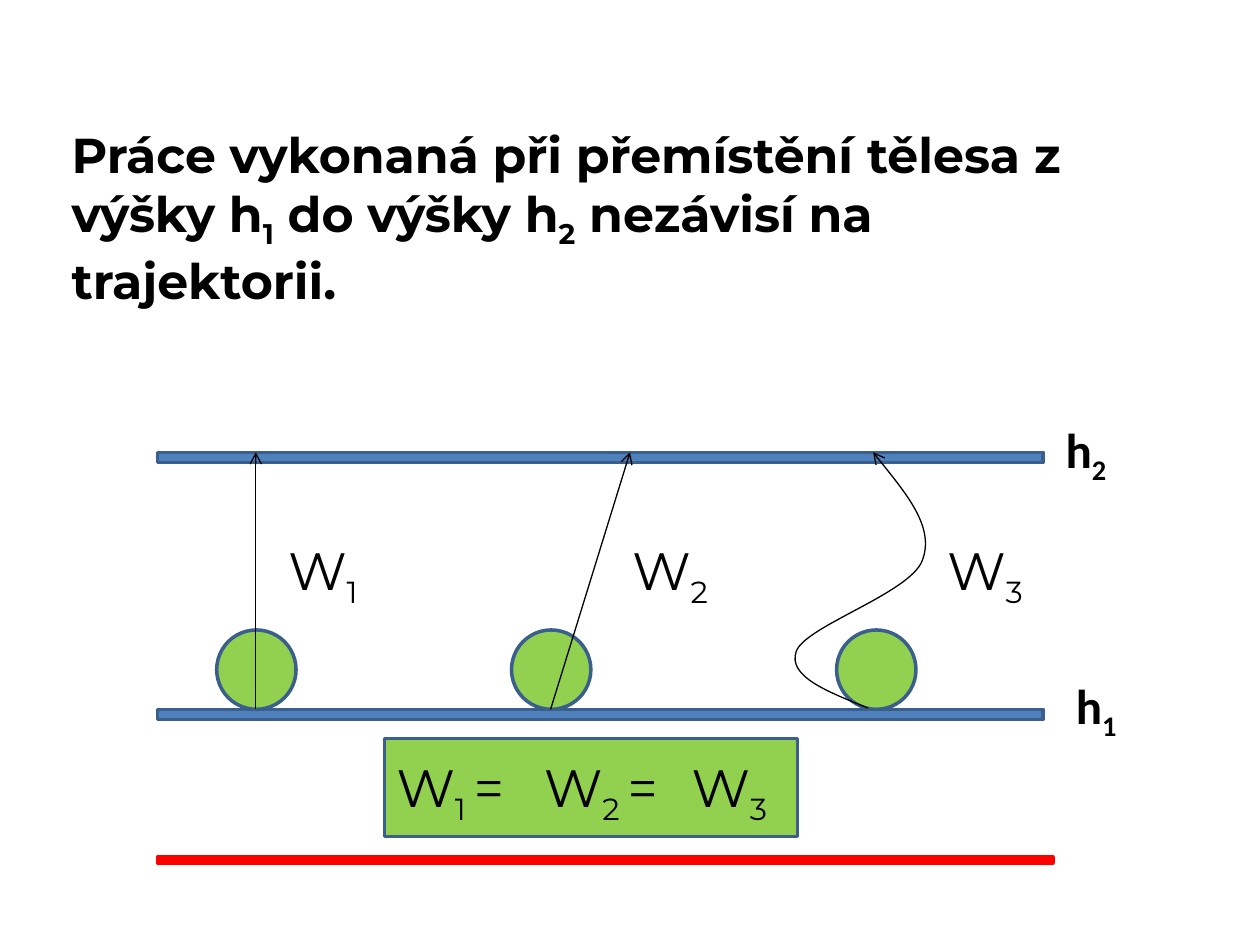
from dataclasses import dataclass

from lxml import etree
from pptx import Presentation
from pptx.dml.color import RGBColor
from pptx.enum.shapes import MSO_CONNECTOR, MSO_SHAPE
from pptx.oxml.ns import qn
from pptx.util import Inches, Pt

RECT = MSO_SHAPE.RECTANGLE
OVAL = MSO_SHAPE.OVAL
LINE = MSO_CONNECTOR.STRAIGHT


@dataclass
class Theme:
    black = RGBColor.from_string("000000")
    green = RGBColor.from_string("92D050")
    blue = RGBColor.from_string("4F81BD")
    edge = RGBColor.from_string("3A5F8C")
    red = RGBColor.from_string("FF0000")
    head = Pt(28)
    work = Pt(30)
    thick = Pt(2)
    thin = Pt(0.75)
    sans = "Montserrat"
    label = "Calibri"


theme = Theme()
deck = Presentation()
deck.slide_width = Inches(10)
deck.slide_height = Inches(7.5)
slide = deck.slides.add_slide(deck.slide_layouts[6])
shapes = slide.shapes


def add_solid(kind, box, fill, edge):
    shape = shapes.add_shape(kind, *map(Inches, box))
    shape.shadow.inherit = False
    shape.fill.solid()
    shape.fill.fore_color.rgb = fill
    shape.line.color.rgb = edge
    shape.line.width = theme.thick


def add_text(box, parts, font, size, bold):
    frame = shapes.add_textbox(*map(Inches, box)).text_frame
    frame.word_wrap = True
    for i, part in enumerate(parts):
        run = frame.paragraphs[0].add_run()
        run.text = part
        run.font.name = font
        run.font.size = size
        run.font.bold = bold
        run.font.color.rgb = theme.black
        if i % 2:
            run._r.get_or_add_rPr().set("baseline", "-25000")


left, top, base = 1.25, 3.59, 5.63
ball = 0.63

add_solid(RECT, (3.05, 5.86, 3.28, 0.78), theme.green, theme.edge)
add_solid(RECT, (left, 6.8, 7.11, 0.05), theme.red, theme.red)
for y in (top, base):
    add_solid(RECT, (left, y, 7.03, 0.08), theme.blue, theme.edge)
for x in (1.72, 4.06, 6.64):
    add_solid(OVAL, (x, base - ball, ball, ball), theme.green, theme.edge)

title = ("Práce vykonaná při přemístění tělesa z výšky h", "1",
         " do výšky h", "2", " nezávisí na trajektorii.")
add_text((0.47, 0.94, 8.2, 1.51), title, theme.sans, theme.head, True)
for x, y, num in ((8.36, 3.28, "2"), (8.44, 5.31, "1")):
    add_text((x, y, 0.86, 0.57), ("h", num), theme.label, theme.head, True)

paths = []
for start, end in ((2.03, 2.03), (4.37, 5)):
    paths.append(shapes.add_connector(
        LINE, Inches(start), Inches(base), Inches(end), Inches(top)))

curve = [(6.89, 5.62), (6.57, 5.49), (6.25, 5.37), (6.32, 5.17),
         (6.39, 4.97), (7.22, 4.71), (7.32, 4.45),
         (7.42, 4.19), (7.17, 3.89), (6.93, top)]
spots = [(Inches(x), Inches(y)) for x, y in curve]
pen = shapes.build_freeform(*spots[0])
pen.add_line_segments(spots[1:], close=False)
bend = pen.convert_to_shape()
bend.shadow.inherit = False
bend.fill.background()
track = bend._element.spPr.find(".//" + qn("a:path"))
steps = track.findall(qn("a:lnTo"))
for i in range(0, len(steps), 3):
    cubic = etree.SubElement(track, qn("a:cubicBezTo"))
    for step in steps[i:i + 3]:
        cubic.append(step[0])
        track.remove(step)
paths.append(bend)

for item in paths:
    item.line.color.rgb = theme.black
    item.line.width = theme.thin
    props = item._element.spPr
    etree.SubElement(props.find(qn("a:ln")), qn("a:tailEnd"), type="arrow")
    if props.find(qn("a:effectLst")) is None:
        etree.SubElement(props, qn("a:effectLst"))

works = (
    (2.19, 4.22, 0.94, ("W", "1")),
    (4.92, 4.22, 0.94, ("W", "2")),
    (7.42, 4.22, 0.94, ("W", "3")),
    (3.05, 5.94, 1.17, ("W", "1 ", "=")),
    (4.22, 5.94, 1.17, ("W", "2 ", "=")),
    (5.39, 5.94, 0.94, ("W", "3")),
)
for x, y, width, parts in works:
    add_text((x, y, width, 0.7), parts, theme.sans, theme.work, False)

deck.save("out.pptx")
